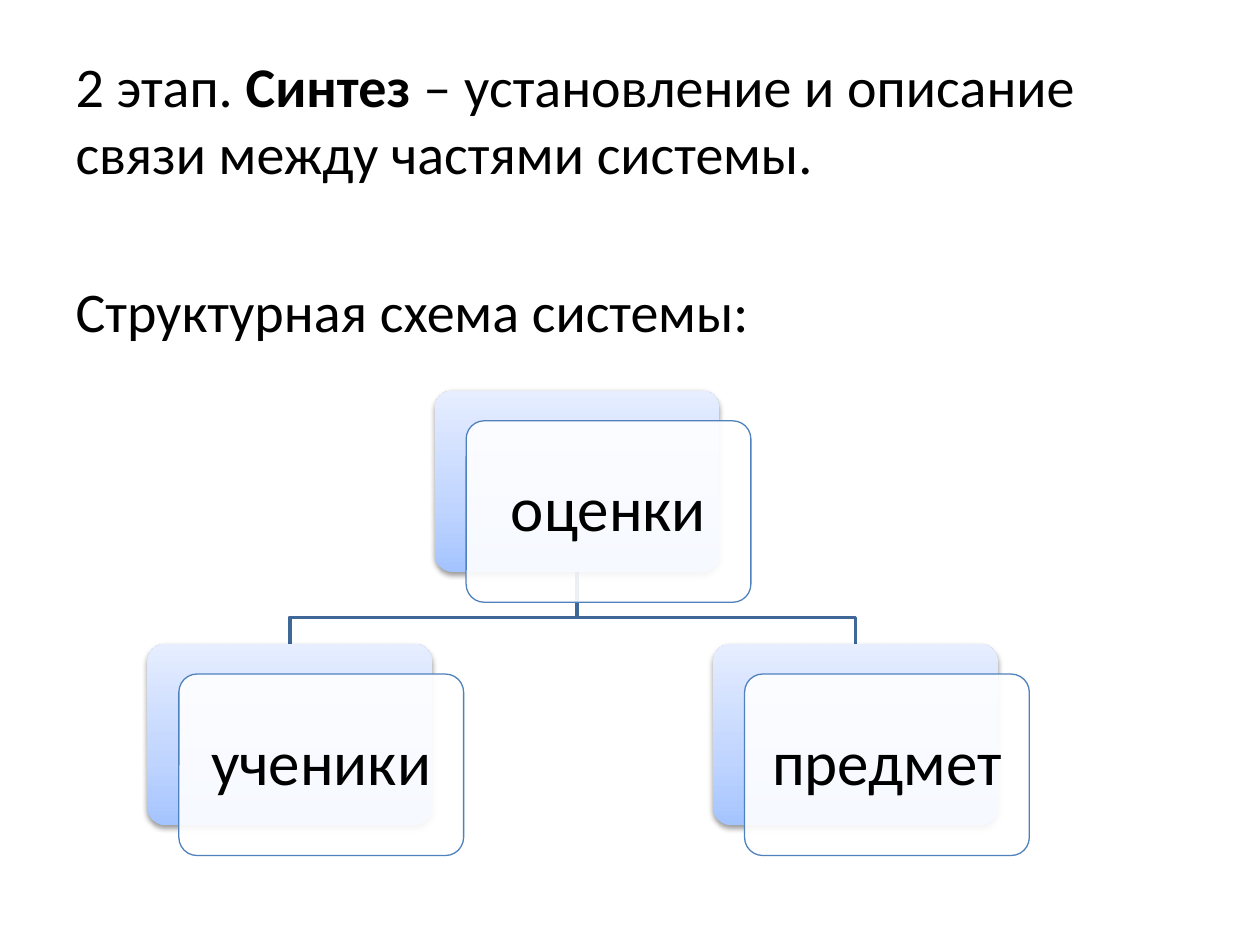
from copy import deepcopy

from lxml.etree import SubElement
from pptx import Presentation
from pptx.dml.color import RGBColor
from pptx.enum.shapes import MSO_SHAPE as Shape
from pptx.enum.text import MSO_ANCHOR as Anchor, PP_ALIGN as Align
from pptx.oxml.ns import qn
from pptx.util import Inches, Pt

BLACK = RGBColor(0x00, 0x00, 0x00)
WHITE = RGBColor(0xFF, 0xFF, 0xFF)
BORDER = RGBColor(0x4F, 0x81, 0xBD)
BRANCH = RGBColor(0x3F, 0x67, 0x97)
GRADIENT = (
    (0, RGBColor(0xA4, 0xC4, 0xFF)),
    (0.35, RGBColor(0xBF, 0xD4, 0xFF)),
    (1, RGBColor(0xE6, 0xEE, 0xFF)),
)
FONT = "Calibri"
CARD_W, CARD_H = 2.26, 1.44
OFFSET_X, OFFSET_Y = 0.25, 0.24


def style_run(run, size, bold=False):
    """Give a run the slide's font and colour."""
    run.font.name, run.font.size, run.font.bold = FONT, Pt(size), bold
    run.font.color.rgb = BLACK


def add_explanation(slide, left, top, width, height):
    """Fill the body placeholder with the stage and the scheme heading."""
    body = slide.placeholders[1]
    body.left, body.top = Inches(left), Inches(top)
    body.width, body.height = Inches(width), Inches(height)
    frame = body.text_frame
    stage, heading = frame.paragraphs[0], frame.add_paragraph()
    for text, bold in (
        ("2 этап. ", False),
        ("Синтез", True),
        (" – установление и описание связи между частями системы.", False),
    ):
        run = stage.add_run()
        run.text = text
        style_run(run, 32, bold)
    heading.text = "Структурная схема системы:"
    style_run(heading.runs[0], 32)
    for paragraph, space in ((stage, 6.4), (heading, 51.5)):
        paragraph.space_before = Pt(space)
        properties = paragraph._p.get_or_add_pPr()
        properties.set("marL", "0")
        properties.set("indent", "0")
        SubElement(properties, qn("a:buNone"))


def add_panel(slide, left, top):
    """Add a rounded panel of card size without a shadow."""
    panel = slide.shapes.add_shape(
        Shape.ROUNDED_RECTANGLE,
        Inches(left), Inches(top), Inches(CARD_W), Inches(CARD_H),
    )
    panel.adjustments[0] = 0.1
    panel.shadow.inherit = False
    return panel


def add_back_panel(slide, left, top):
    """Add the gradient panel with its soft shadow."""
    panel = add_panel(slide, left, top)
    panel.line.fill.background()
    panel.fill.gradient()
    panel.fill.gradient_angle = 90
    properties = panel._element.spPr
    stops = properties.find(qn("a:gradFill")).find(qn("a:gsLst"))
    stops.append(deepcopy(stops[0]))
    for stop, (position, color) in zip(panel.fill.gradient_stops, GRADIENT):
        stop.position = position
        stop.color.rgb = color
    shadow = SubElement(
        properties.find(qn("a:effectLst")), qn("a:outerShdw"),
        blurRad=str(Pt(3.1)), dist=str(Pt(1.6)), dir="5400000", rotWithShape="0",
    )
    shade = SubElement(shadow, qn("a:srgbClr"), val=str(BLACK))
    SubElement(shade, qn("a:alpha"), val="38000")


def add_card(slide, label, left, top):
    """Add a back panel and the translucent labelled panel over it."""
    add_back_panel(slide, left, top)
    front = add_panel(slide, left + OFFSET_X, top + OFFSET_Y)
    front.fill.solid()
    front.fill.fore_color.rgb = WHITE
    tint = front._element.spPr.find(qn("a:solidFill"))[0]
    SubElement(tint, qn("a:alpha"), val="90000")
    front.line.color.rgb = BORDER
    front.line.width = Pt(0.75)
    frame = front.text_frame
    frame.word_wrap = True
    frame.vertical_anchor = Anchor.MIDDLE
    frame.margin_left = frame.margin_right = Inches(0.15)
    frame.margin_top = frame.margin_bottom = Inches(0.15)
    frame.text = label
    paragraph = frame.paragraphs[0]
    paragraph.alignment = Align.CENTER
    paragraph.line_spacing = 0.9
    style_run(paragraph.runs[0], 36)


def add_branch(slide, start_x, start_y, end_x, end_y):
    """Draw an angled line from the parent card to a child card."""
    bend_y = start_y + 0.36
    builder = slide.shapes.build_freeform(
        Inches(start_x), Inches(start_y), scale=1.0
    )
    corners = ((start_x, bend_y), (end_x, bend_y), (end_x, end_y))
    builder.add_line_segments(
        [(Inches(x), Inches(y)) for x, y in corners], close=False
    )
    branch = builder.convert_to_shape()
    branch.fill.background()
    branch.line.color.rgb = BRANCH
    branch.line.width = Pt(2)
    branch.shadow.inherit = False


def add_scheme(slide, left, top, width, height):
    """Draw the parent card over two children inside the given box."""
    parent_x = left + 2.28
    child_y = top + height - CARD_H - OFFSET_Y
    children = (
        ("ученики", left),
        ("предмет", left + width - CARD_W - OFFSET_X),
    )
    for _, child_x in reversed(children):
        add_branch(
            slide, parent_x + CARD_W / 2, top + CARD_H,
            child_x + CARD_W / 2, child_y,
        )
    add_card(slide, "оценки", parent_x, top)
    for label, child_x in children:
        add_card(slide, label, child_x, child_y)


def main():
    """Build and save the slide."""
    deck = Presentation()
    deck.slide_width, deck.slide_height = Inches(10), Inches(7.5)
    slide = deck.slides.add_slide(deck.slide_layouts[1])
    title = slide.shapes.title._element
    title.getparent().remove(title)
    add_explanation(slide, 0.5, 0.36, 9, 6.34)
    add_scheme(slide, 1.17, 3.1, 7, 3.69)
    deck.save("out.pptx")


if __name__ == "__main__":
    main()
